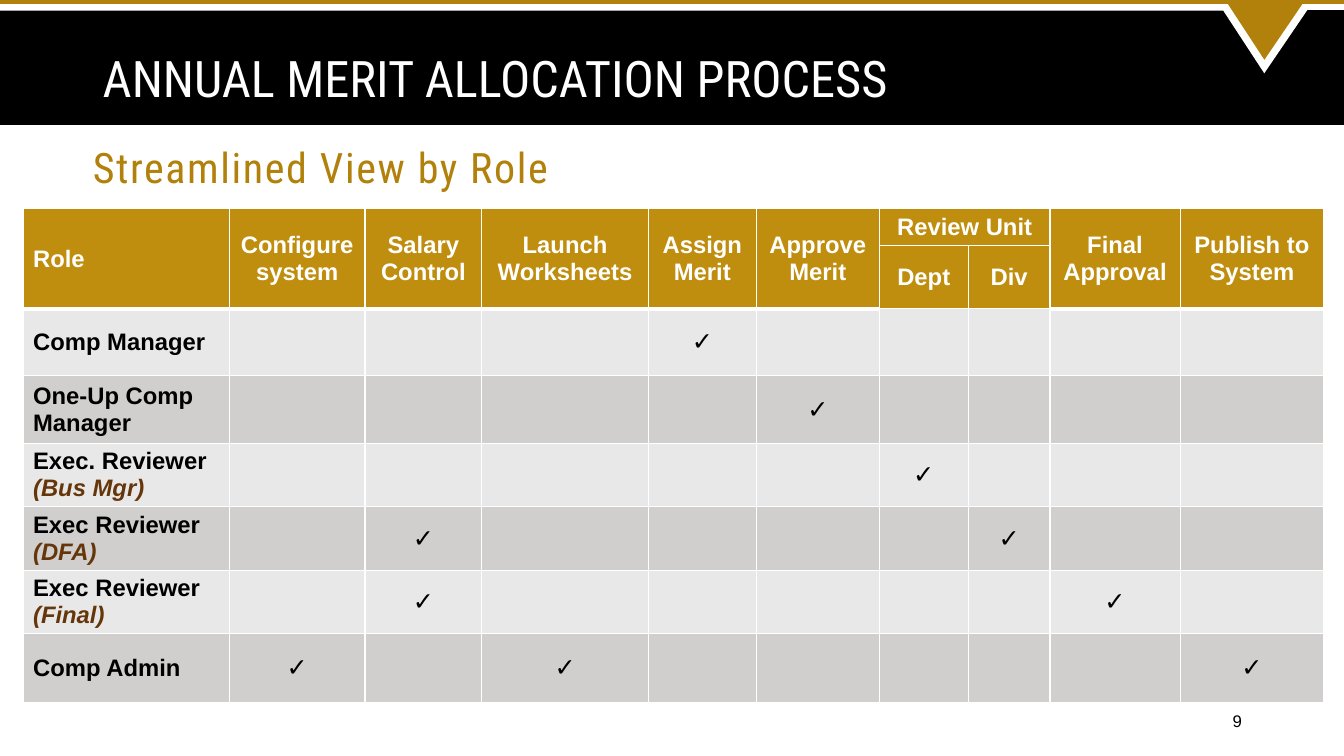
from dataclasses import dataclass

import lxml.etree
import pptx
import pptx.dml.color
import pptx.enum.shapes
import pptx.enum.text
import pptx.oxml.ns
import pptx.util

Cm = pptx.util.Cm
Pt = pptx.util.Pt
SHAPE = pptx.enum.shapes.MSO_SHAPE
ALIGN = pptx.enum.text.PP_ALIGN
MIDDLE = pptx.enum.text.MSO_ANCHOR.MIDDLE
TOP = pptx.enum.text.MSO_ANCHOR.TOP


@dataclass(frozen=True)
class Theme:
    """Colours, fonts and type sizes of the slide."""
    black: str = "000000"
    white: str = "FFFFFF"
    gold: str = "B1810B"
    header: str = "C08E0E"
    brown: str = "64360A"
    bands: tuple = ("E9E8E8", "D0CFCE")
    display: str = "Roboto Condensed"
    body: str = "Arial"
    title_size: float = 36
    subtitle_size: float = 30
    check_size: float = 18
    table_size: float = 17
    number_size: float = 12


THEME = Theme()
COLUMN_WIDTHS = (5.2, 3.42, 2.94, 4.2, 2.72, 3.1, 2.24, 2.06, 3.28, 3.62)
ROW_HEIGHTS = (0.92, 1.6, 1.68, 1.71, 1.6, 1.6, 1.6, 1.73)
REVIEW_COLUMNS = (6, 7)
STEPS = ("Role", "Configure system", "Salary Control", "Launch Worksheets",
         "Assign Merit", "Approve Merit", "Review Unit", "",
         "Final Approval", "Publish to System")
ROLES = (
    (("Comp Manager",), (4,)),
    (("One-Up Comp Manager",), (5,)),
    (("Exec. Reviewer", "(Bus Mgr)"), (6,)),
    (("Exec Reviewer", "(DFA)"), (2, 7)),
    (("Exec Reviewer", "(Final)"), (2, 8)),
    (("Comp Admin",), (1, 3, 9)),
)


def rgb(colour):
    """Turn a hex string into a colour."""
    return pptx.dml.color.RGBColor.from_string(colour)


def style(paragraph, size, colour, font=THEME.body, bold=False, italic=False, align=ALIGN.LEFT):
    """Set the type of a paragraph."""
    paragraph.alignment = align
    paragraph.font.name = font
    paragraph.font.size = Pt(size)
    paragraph.font.bold = bold
    paragraph.font.italic = italic
    paragraph.font.color.rgb = rgb(colour)


def add_block(slide, kind, left, top, width, height, fill):
    """Add a plain filled shape without outline or shadow."""
    block = slide.shapes.add_shape(kind, Cm(left), Cm(top), Cm(width), Cm(height))
    block.shadow.inherit = False
    block.fill.solid()
    block.fill.fore_color.rgb = rgb(fill)
    block.line.fill.background()
    return block


def add_text(slide, text, left, top, width, height, anchor=MIDDLE):
    """Add a one-paragraph text box and return its frame."""
    frame = slide.shapes.add_textbox(Cm(left), Cm(top), Cm(width), Cm(height)).text_frame
    frame.word_wrap = True
    frame.vertical_anchor = anchor
    frame.paragraphs[0].text = text
    return frame


def add_banner(slide):
    """Draw the black band with its gold edge and pointer."""
    add_block(slide, SHAPE.RECTANGLE, 0, 0, 33.87, 3.15, THEME.black)
    pointer = add_block(slide, SHAPE.ISOSCELES_TRIANGLE, 30.73, -0.05, 2.31, 1.73, THEME.gold)
    pointer.rotation = 180
    pointer.adjustments[0] = 0.51
    pointer.line.color.rgb = rgb(THEME.white)
    pointer.line.width = Pt(5.25)
    lxml.etree.SubElement(pointer.line._get_or_add_ln(), pptx.oxml.ns.qn("a:miter"), lim="800000")
    add_block(slide, SHAPE.RECTANGLE, 0, 0, 30.83, 0.27, THEME.white)
    add_block(slide, SHAPE.RECTANGLE, 32.86, 0, 1.01, 0.25, THEME.white)
    add_block(slide, SHAPE.RECTANGLE, 0, 0, 33.87, 0.1, THEME.gold)


def add_headings(slide):
    """Write the title, the subtitle and the page number."""
    title = add_text(slide, "ANNUAL MERIT ALLOCATION PROCESS", 2.34, 1.0, 28.93, 2.08).paragraphs[0]
    title.line_spacing = 0.9
    style(title, THEME.title_size, THEME.white, THEME.display)

    frame = add_text(slide, "Streamlined View by Role", 2.34, 3.56, 29.21, 1.17, TOP)
    frame.margin_left = frame.margin_top = frame.margin_right = frame.margin_bottom = 0
    subtitle = frame.paragraphs[0]
    style(subtitle, THEME.subtitle_size, THEME.gold, THEME.display)
    subtitle.runs[0].font._element.set("spc", "120")

    number = add_text(slide, "9", 23.93, 17.65, 7.62, 1.02).paragraphs[0]
    style(number, THEME.number_size, THEME.black, align=ALIGN.RIGHT)


def paint_cell(cell, fill, left=1, right=1, top=1, bottom=1):
    """Give a cell its fill, tight margins and white borders, in points."""
    properties = cell._tc.get_or_add_tcPr()
    for side, width in zip("LRTB", (left, right, top, bottom)):
        border = lxml.etree.SubElement(
            properties, pptx.oxml.ns.qn(f"a:ln{side}"), w=str(Pt(width)))
        solid = lxml.etree.SubElement(border, pptx.oxml.ns.qn("a:solidFill"))
        lxml.etree.SubElement(solid, pptx.oxml.ns.qn("a:srgbClr"), val=THEME.white)
    cell.fill.solid()
    cell.fill.fore_color.rgb = rgb(fill)
    cell.vertical_anchor = MIDDLE
    cell.margin_top = cell.margin_bottom = Cm(0.05)


def fill_header(table):
    """Write the two header rows and merge their cells."""
    for column, step in enumerate(STEPS):
        review = column in REVIEW_COLUMNS
        for row in (0, 1):
            cell = table.cell(row, column)
            if review:
                edges = {"top": 1 - row / 2, "bottom": 0.5 + row / 2,
                         "left": 0.5 if column == REVIEW_COLUMNS[0] else 1,
                         "right": 0.5 if column == REVIEW_COLUMNS[1] else 1}
            else:
                edges = {"bottom": 3,
                         "left": 0.5 if column - 1 in REVIEW_COLUMNS else 1,
                         "right": 0.5 if column + 1 in REVIEW_COLUMNS else 1}
            paint_cell(cell, THEME.header, **edges)
            cell.text = step if row == 0 else ""
            if review and row == 1:
                cell.text = ("Dept", "Div")[REVIEW_COLUMNS.index(column)]
            style(cell.text_frame.paragraphs[0], THEME.table_size, THEME.white, bold=True,
                  align=ALIGN.CENTER if column else ALIGN.LEFT)
        if not review:
            table.cell(0, column).merge(table.cell(1, column))
    table.cell(0, REVIEW_COLUMNS[0]).merge(table.cell(0, REVIEW_COLUMNS[1]))


def fill_role(table, row, label, checks):
    """Write one role and tick the steps it performs."""
    for column in range(len(COLUMN_WIDTHS)):
        cell = table.cell(row, column)
        paint_cell(cell, THEME.bands[row % 2], top=3 if row == 2 and column not in REVIEW_COLUMNS else 1)
        if column in checks:
            cell.text = "✓"
            style(cell.text_frame.paragraphs[0], THEME.check_size, THEME.black, align=ALIGN.CENTER)
    role = table.cell(row, 0)
    role.text = "\n".join(label)
    for line, paragraph in enumerate(role.text_frame.paragraphs):
        style(paragraph, THEME.table_size, THEME.brown if line else THEME.black,
              bold=True, italic=line > 0)


def add_role_table(slide):
    """Build the table of roles against process steps."""
    table = slide.shapes.add_table(
        len(ROW_HEIGHTS), len(COLUMN_WIDTHS), Cm(0.58), Cm(5.26),
        Cm(sum(COLUMN_WIDTHS)), Cm(sum(ROW_HEIGHTS))).table
    table.horz_banding = False
    for column, width in zip(table.columns, COLUMN_WIDTHS):
        column.width = Cm(width)
    for row, height in zip(table.rows, ROW_HEIGHTS):
        row.height = Cm(height)
    fill_header(table)
    for row, (label, checks) in enumerate(ROLES, start=2):
        fill_role(table, row, label, checks)


def main():
    """Build and save the slide."""
    deck = pptx.Presentation()
    deck.slide_width, deck.slide_height = Cm(33.87), Cm(19.05)
    slide = deck.slides.add_slide(deck.slide_layouts[6])
    add_banner(slide)
    add_headings(slide)
    add_role_table(slide)
    deck.save("out.pptx")


if __name__ == "__main__":
    main()
